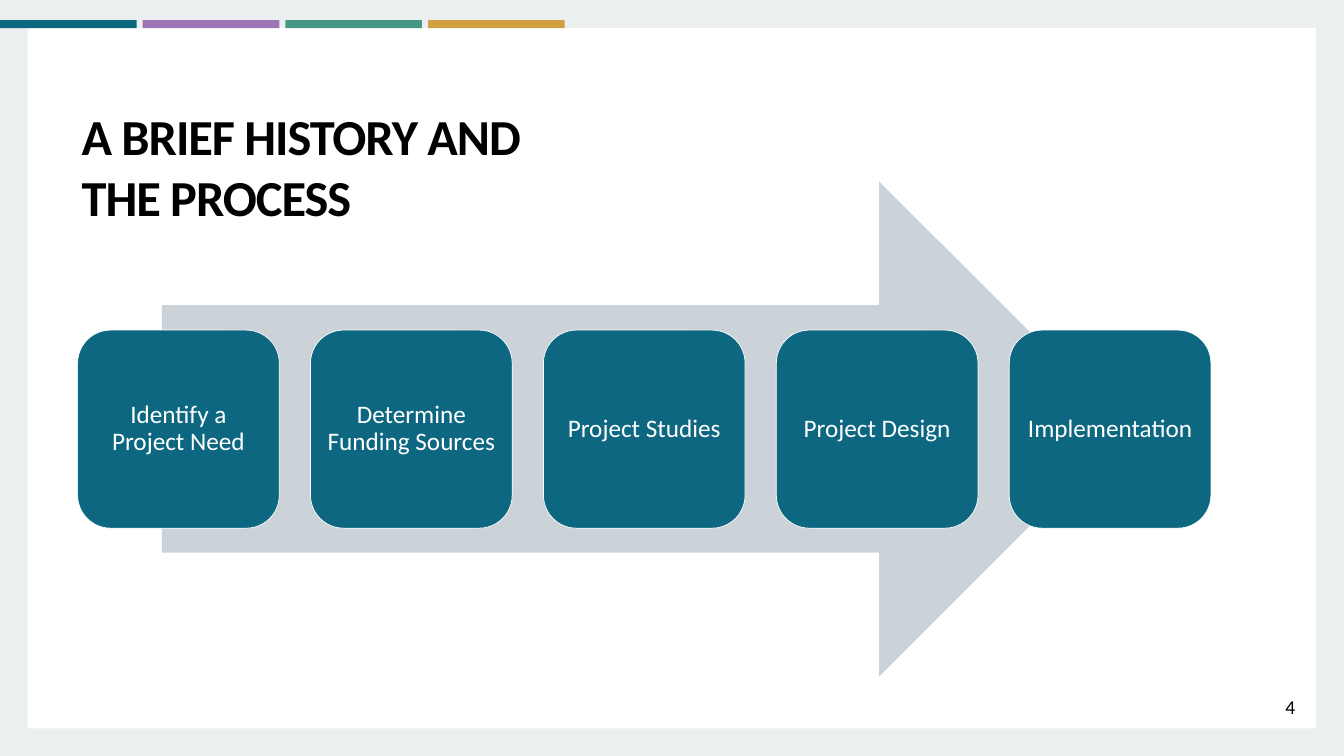
import pptx
import pptx.dml.color
import pptx.enum.shapes
import pptx.enum.text
import pptx.util

Inches = pptx.util.Inches
Shape = pptx.enum.shapes.MSO_SHAPE
Align = pptx.enum.text.PP_ALIGN
Anchor = pptx.enum.text.MSO_ANCHOR

COLORS = {
    "frame": "ECEFF0",
    "white": "FFFFFF",
    "black": "000000",
    "teal": "0D6781",
    "purple": "9E76B4",
    "green": "459786",
    "gold": "D1A140",
    "arrow": "CCD3D8",
}
STEPS = [
    "Identify a Project Need",
    "Determine Funding Sources",
    "Project Studies",
    "Project Design",
    "Implementation",
]


def rgb(name):
    return pptx.dml.color.RGBColor.from_string(COLORS[name])


def write_text(shape, lines, *, size, color="black", bold=False, align=Align.LEFT,
               anchor=Anchor.TOP, line_spacing=1.0, tracking=None,
               inset_x=0.1, inset_y=0.05):
    """Fill a shape with one paragraph per line; tracking is in points."""
    frame = shape.text_frame
    frame.word_wrap = True
    frame.auto_size = pptx.enum.text.MSO_AUTO_SIZE.NONE
    frame.vertical_anchor = anchor
    frame.margin_left = frame.margin_right = Inches(inset_x)
    frame.margin_top = frame.margin_bottom = Inches(inset_y)
    for index, line in enumerate(lines):
        paragraph = frame.add_paragraph() if index else frame.paragraphs[0]
        paragraph.alignment = align
        paragraph.line_spacing = line_spacing
        paragraph.space_before = pptx.util.Pt(0)
        run = paragraph.add_run()
        run.text = line
        run.font.name = "Calibri"
        run.font.size = pptx.util.Pt(size)
        run.font.bold = bold
        run.font.color.rgb = rgb(color)
        if tracking is not None:
            run._r.get_or_add_rPr().set("spc", str(round(tracking * 100)))


class SlideBuilder:
    def __init__(self, presentation):
        self.slide = presentation.slides.add_slide(presentation.slide_layouts[5])

    def title(self, lines, left, top, width, height):
        title = self.slide.shapes.title
        title.left, title.top = Inches(left), Inches(top)
        title.width, title.height = Inches(width), Inches(height)
        write_text(title, lines, size=72, bold=True, tracking=-1.5)

    def block(self, kind, left, top, width, height, fill, line=None):
        shape = self.slide.shapes.add_shape(
            kind, Inches(left), Inches(top), Inches(width), Inches(height))
        shape.shadow.inherit = False
        shape.fill.solid()
        shape.fill.fore_color.rgb = rgb(fill)
        if line:
            shape.line.color.rgb = rgb(line)
            shape.line.width = pptx.util.Pt(1)
        else:
            shape.line.fill.background()
        return shape

    def step(self, text, left, top, width, height):
        box = self.block(Shape.ROUNDED_RECTANGLE, left, top, width, height,
                         "teal", line="white")
        # The rounded corners already narrow the text area.
        write_text(box, [text], size=36, color="white", align=Align.CENTER,
                   anchor=Anchor.MIDDLE, line_spacing=0.9,
                   inset_x=0.14, inset_y=0.14)

    def page_number(self, number, left, top, width, height):
        box = self.slide.shapes.add_textbox(
            Inches(left), Inches(top), Inches(width), Inches(height))
        write_text(box, [str(number)], size=28, align=Align.CENTER)


def main():
    presentation = pptx.Presentation()
    presentation.slide_width = Inches(26.66)
    presentation.slide_height = Inches(15)
    builder = SlideBuilder(presentation)

    builder.block(Shape.RECTANGLE, 0, 0, 26.66, 15, "frame")
    builder.block(Shape.RECTANGLE, 0.55, 0.56, 25.56, 13.89, "white")
    for index, color in enumerate(["teal", "purple", "green", "gold"]):
        builder.block(Shape.RECTANGLE, index * 2.83, 0.4, 2.71, 0.16, color)

    # The title placeholder comes first in z-order, so bring it above the panel.
    title = builder.slide.shapes.title
    builder.slide.shapes._spTree.append(title._element)
    builder.title(["A BRIEF HISTORY AND", "THE PROCESS"], 1.52, 2.04, 13.89, 2.5)

    builder.block(Shape.RIGHT_ARROW, 3.21, 3.6, 19.14, 9.82, "arrow")
    for index, text in enumerate(STEPS):
        builder.step(text, 1.54 + index * 4.62, 6.55, 4, 3.93)
    builder.page_number(4, 25.2, 13.74, 0.79, 0.57)

    presentation.save("out.pptx")


if __name__ == "__main__":
    main()
